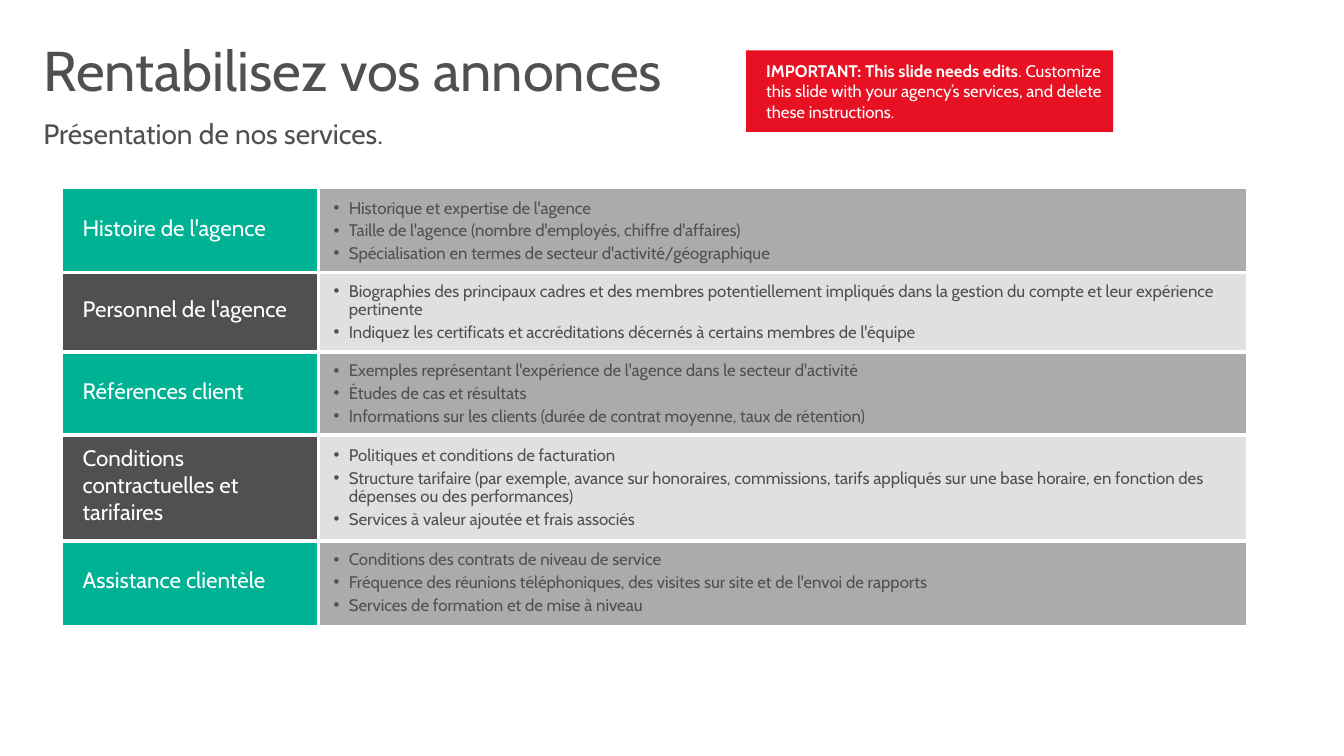
from lxml.etree import SubElement
from pptx import Presentation
from pptx.dml.color import RGBColor
from pptx.enum.shapes import MSO_SHAPE as Shape
from pptx.enum.text import MSO_ANCHOR as Anchor, MSO_AUTO_SIZE as AutoSize, PP_ALIGN as Align
from pptx.oxml import parse_xml
from pptx.oxml.ns import nsdecls, qn
from pptx.util import Inches, Pt

COLORS = {
    "white": "FFFFFF", "text": "505050", "green": "00B294",
    "gray": "ABABAB", "pale": "E1E0DF", "red": "E81123",
}
FONT = "Cabin"
TITLE = "Rentabilisez vos annonces"
SUBTITLE = "Présentation de nos services."
NOTICE = [
    ("IMPORTANT: This slide needs edits", True),
    (". Customize this slide with your agency’s services, and delete these instructions.", False),
]
SERVICES = [
    ("Histoire de l'agence", 0.82, [
        "Historique et expertise de l'agence",
        "Taille de l'agence (nombre d'employés, chiffre d'affaires)",
        "Spécialisation en termes de secteur d'activité/géographique",
    ]),
    ("Personnel de l'agence", 0.79, [
        "Biographies des principaux cadres et des membres potentiellement impliqués "
        "dans la gestion du compte et leur expérience pertinente",
        "Indiquez les certificats et accréditations décernés à certains membres de l'équipe",
    ]),
    ("Références client", 0.82, [
        "Exemples représentant l'expérience de l'agence dans le secteur d'activité",
        "Études de cas et résultats",
        "Informations sur les clients (durée de contrat moyenne, taux de rétention)",
    ]),
    ("Conditions contractuelles et tarifaires", 1.05, [
        "Politiques et conditions de facturation",
        "Structure tarifaire (par exemple, avance sur honoraires, commissions, tarifs appliqués "
        "sur une base horaire, en fonction des dépenses ou des performances)",
        "Services à valeur ajoutée et frais associés",
    ]),
    ("Assistance clientèle", 0.83, [
        "Conditions des contrats de niveau de service",
        "Fréquence des réunions téléphoniques, des visites sur site et de l'envoi de rapports",
        "Services de formation et de mise à niveau",
    ]),
]
COLUMN_WIDTHS = (2.54, 9.2)
ROW_FILLS = (("green", "gray"), ("text", "pale"))
MARGIN_SIDES = ("margin_left", "margin_top", "margin_right", "margin_bottom")


def color(name):
    return RGBColor.from_string(COLORS[name])


def set_format(target, values):
    for name, value in values.items():
        setattr(target, name, value)


def set_margins(target, margins):
    set_format(target, {side: Inches(size) for side, size in zip(MARGIN_SIDES, margins)})


def add_span(para, text, size, color_name, bold=False):
    span = para.add_run()
    span.text = text
    set_format(span.font, {"name": FONT, "size": Pt(size), "bold": bold})
    span.font.color.rgb = color(color_name)


def write_heading(box, text, top, height, size):
    set_format(box, {"left": Inches(0.43), "top": Inches(top),
                     "width": Inches(11.66), "height": Inches(height)})
    frame = box.text_frame
    set_format(frame, {"word_wrap": True, "auto_size": AutoSize.NONE, "vertical_anchor": Anchor.TOP})
    set_margins(frame, (0, 0, 0, 0))
    para = frame.paragraphs[0]
    set_format(para, {"alignment": Align.LEFT, "line_spacing": 0.9, "space_before": Pt(0)})
    add_span(para, text, size, "text")


def add_bullet(para):
    properties = para._p.get_or_add_pPr()
    properties.set("marL", str(Inches(0.15)))
    properties.set("indent", str(Inches(-0.15)))
    SubElement(properties, qn("a:buFont"), typeface="Arial")
    SubElement(properties, qn("a:buChar"), char="•")
    set_format(para, {"line_spacing": 0.9, "space_after": Pt(3)})


def set_borders(cell, inner_sides):
    properties = cell._tc.get_or_add_tcPr()
    for position, side in enumerate("LRTB"):
        line = "<a:noFill/>"
        if side in inner_sides:
            line = f'<a:solidFill><a:srgbClr val="{COLORS["white"]}"/></a:solidFill>'
        properties.insert(position, parse_xml(
            f'<a:ln{side} {nsdecls("a")} w="{Pt(3)}">{line}</a:ln{side}>'))


def style_cell(cell, fill, margins, inner_sides):
    cell.vertical_anchor = Anchor.MIDDLE
    set_margins(cell, margins)
    cell.fill.solid()
    cell.fill.fore_color.rgb = color(fill)
    set_borders(cell, inner_sides)


def add_notice(page):
    box = page.shapes.add_shape(Shape.RECTANGLE, Inches(7.4), Inches(0.5), Inches(3.64), Inches(0.81))
    box.shadow.inherit = False
    box.fill.solid()
    box.fill.fore_color.rgb = color("red")
    box.line.fill.background()
    frame = box.text_frame
    set_format(frame, {"word_wrap": True, "vertical_anchor": Anchor.MIDDLE,
                       "auto_size": AutoSize.SHAPE_TO_FIT_TEXT})
    set_margins(frame, (0.2, 0.1, 0.1, 0.1))
    para = frame.paragraphs[0]
    para.alignment = Align.LEFT
    for text, bold in NOTICE:
        add_span(para, text, 12, "white", bold)


def add_services(page):
    total_height = sum(height for _, height, _ in SERVICES)
    table = page.shapes.add_table(
        len(SERVICES), len(COLUMN_WIDTHS), Inches(0.62), Inches(1.88),
        Inches(sum(COLUMN_WIDTHS)), Inches(total_height)).table
    set_format(table, {"first_row": False, "horz_banding": False})
    for column, width in zip(table.columns, COLUMN_WIDTHS):
        column.width = Inches(width)
    for index, (name, height, details) in enumerate(SERVICES):
        table.rows[index].height = Inches(height)
        label, content = table.cell(index, 0), table.cell(index, 1)
        label_fill, content_fill = ROW_FILLS[index % 2]
        sides = ("T" if index else "") + ("B" if index < len(SERVICES) - 1 else "")
        style_cell(label, label_fill, (0.2, 0.1, 0.2, 0.15), "R" + sides)
        style_cell(content, content_fill, (0.15, 0.1, 0.1, 0.1), "L" + sides)
        add_span(label.text_frame.paragraphs[0], name, 16, "white")
        frame = content.text_frame
        for number, detail in enumerate(details):
            para = frame.add_paragraph() if number else frame.paragraphs[0]
            add_bullet(para)
            add_span(para, detail, 12, "text")


def main():
    deck = Presentation()
    set_format(deck, {"slide_width": Inches(13.33), "slide_height": Inches(7.5)})
    page = deck.slides.add_slide(deck.slide_layouts[5])
    write_heading(page.shapes.title, TITLE, 0.43, 0.55, 40)
    write_heading(page.shapes.add_textbox(0, 0, 0, 0), SUBTITLE, 1.19, 0.58, 20)
    add_notice(page)
    add_services(page)
    deck.save("out.pptx")


if __name__ == "__main__":
    main()
